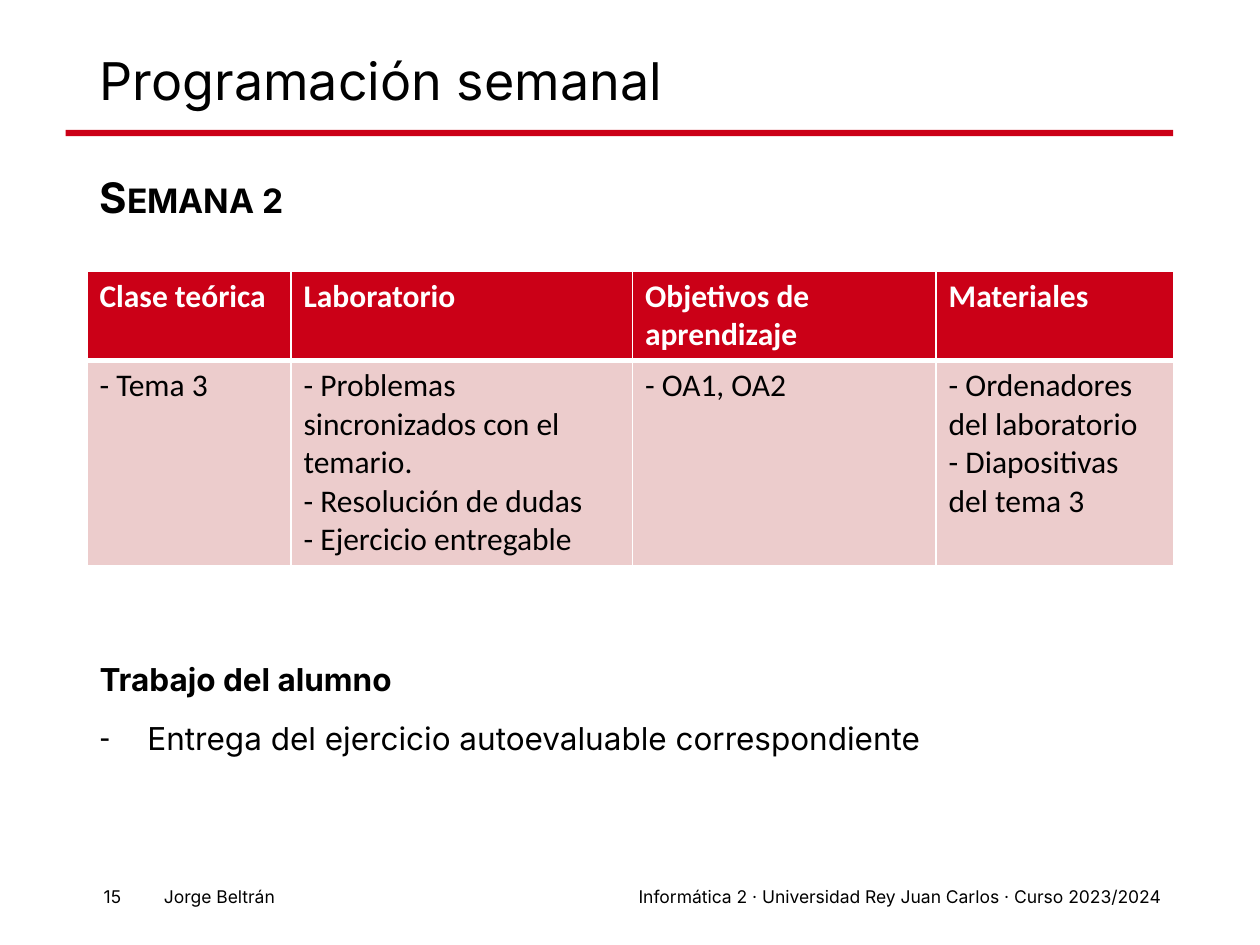
from dataclasses import dataclass

from lxml.etree import SubElement
from pptx import Presentation
from pptx.dml.color import RGBColor
from pptx.enum.shapes import MSO_SHAPE
from pptx.enum.text import MSO_ANCHOR, MSO_AUTO_SIZE, PP_ALIGN
from pptx.oxml.ns import qn
from pptx.util import Inches, Pt


@dataclass(frozen=True)
class Theme:
    red: RGBColor = RGBColor(0xCB, 0x00, 0x17)
    pink: RGBColor = RGBColor(0xEC, 0xCC, 0xCC)
    black: RGBColor = RGBColor(0, 0, 0)
    white: RGBColor = RGBColor(255, 255, 255)
    text_font: str = "Inter"
    table_font: str = "Calibri"
    title_size: float = 29.7
    week_size: float = 24
    body_size: float = 18
    footer_size: float = 10


THEME = Theme()
LEFT, WIDTH = 0.69, 8.62

SCHEDULE = [
    ["Clase teórica", "Laboratorio", "Objetivos de aprendizaje", "Materiales"],
    [
        "- Tema 3",
        "- Problemas sincronizados con el temario.\n"
        "- Resolución de dudas\n- Ejercicio entregable",
        "- OA1, OA2",
        "- Ordenadores del laboratorio\n- Diapositivas del tema 3",
    ],
]
COLUMN_WIDTHS = [1.62, 2.71, 2.41, 1.89]
ROW_HEIGHTS = [0.69, 1.61]


def set_all(target, values):
    for name, value in values.items():
        setattr(target, name, value)


def place(shape, box):
    set_all(shape, dict(zip(("left", "top", "width", "height"), map(Inches, box))))


def add_span(para, text, size, bold=False, color=THEME.black, font=THEME.text_font):
    span = para.add_run()
    span.text = text
    set_all(span.font, {"size": Pt(size), "bold": bold, "name": font})
    span.font.color.rgb = color
    return span


def prepare_frame(shape, box, anchor):
    place(shape, box)
    frame = shape.text_frame
    set_all(frame, {"word_wrap": True, "auto_size": MSO_AUTO_SIZE.NONE,
                    "vertical_anchor": anchor})
    return frame


def format_list_para(para, bullet=None):
    set_all(para, {"line_spacing": 1.2, "space_before": Pt(7.5),
                   "alignment": PP_ALIGN.LEFT})
    indent = Inches(0.38) if bullet else 0
    properties = para._p.get_or_add_pPr()
    properties.set("marL", str(indent))
    properties.set("indent", str(-indent))
    if bullet:
        SubElement(properties, qn("a:buChar")).set("char", bullet)
    else:
        SubElement(properties, qn("a:buNone"))


def add_title(page, box):
    frame = prepare_frame(page.shapes.title, box, MSO_ANCHOR.MIDDLE)
    para = frame.paragraphs[0]
    set_all(para, {"alignment": PP_ALIGN.LEFT, "line_spacing": 0.9})
    add_span(para, "Programación semanal", THEME.title_size)


def add_rule(page, box):
    rule = page.shapes.add_shape(MSO_SHAPE.RECTANGLE, *map(Inches, box))
    rule.shadow.inherit = False
    rule.fill.solid()
    rule.fill.fore_color.rgb = THEME.red
    rule.line.fill.background()


def add_week(page, box):
    frame = prepare_frame(page.placeholders[1], box, MSO_ANCHOR.TOP)
    para = frame.paragraphs[0]
    format_list_para(para)
    span = add_span(para, "Semana 2", THEME.week_size, bold=True)
    span.font._element.set("cap", "small")


def set_borders(cell, widths):
    """Draw white edges; widths maps L, R, T and B, in that order, to points."""
    properties = cell._tc.get_or_add_tcPr()
    for position, (side, width) in enumerate(widths.items()):
        line = SubElement(properties, qn(f"a:ln{side}"), w=str(Pt(width)))
        fill = SubElement(line, qn("a:solidFill"))
        SubElement(fill, qn("a:srgbClr"), val=str(THEME.white))
        properties.insert(position, line)


def fill_cell(cell, text, is_header):
    cell.fill.solid()
    cell.fill.fore_color.rgb = THEME.red if is_header else THEME.pink
    header_edge = {"B": 3} if is_header else {"T": 3}
    set_borders(cell, {"L": 1, "R": 1, "T": 1, "B": 1} | header_edge)
    frame = cell.text_frame
    for index, line in enumerate(text.split("\n")):
        para = frame.add_paragraph() if index else frame.paragraphs[0]
        add_span(para, line, THEME.body_size, is_header,
                 THEME.white if is_header else THEME.black, THEME.table_font)


def add_schedule(page, box):
    table = page.shapes.add_table(len(SCHEDULE), len(COLUMN_WIDTHS),
                                  *map(Inches, box)).table
    table.horz_banding = False
    for column, width in zip(table.columns, COLUMN_WIDTHS):
        column.width = Inches(width)
    for row, height, texts in zip(table.rows, ROW_HEIGHTS, SCHEDULE):
        row.height = Inches(height)
        for cell, text in zip(row.cells, texts):
            fill_cell(cell, text, texts is SCHEDULE[0])


def add_student_work(page, box):
    frame = prepare_frame(page.placeholders[2], box, MSO_ANCHOR.TOP)
    heading = frame.paragraphs[0]
    format_list_para(heading)
    add_span(heading, "Trabajo del alumno", THEME.body_size, bold=True)
    task = frame.add_paragraph()
    format_list_para(task, bullet="-")
    add_span(task, "Entrega del ejercicio autoevaluable correspondiente",
             THEME.body_size)


def add_footer(page, top, height):
    parts = [
        ("15", 0.58, 0.48),
        ("Jorge Beltrán", 0.21, 2.07),
        ("Informática 2 · Universidad Rey Juan Carlos · Curso 2023/2024", 2.53, 6.78),
    ]
    for text, left, width in parts:
        box = (left, top, width, height)
        shape = page.shapes.add_textbox(*map(Inches, box))
        para = prepare_frame(shape, box, MSO_ANCHOR.TOP).paragraphs[0]
        para.alignment = PP_ALIGN.RIGHT
        add_span(para, text, THEME.footer_size)


def main():
    deck = Presentation()
    set_all(deck, {"slide_width": Inches(10), "slide_height": Inches(7.5)})
    page = deck.slides.add_slide(deck.slide_layouts.get_by_name("Two Content"))
    add_rule(page, (0.52, 1.03, 8.79, 0.05))
    add_footer(page, 6.98, 0.27)
    add_title(page, (LEFT, 0.4, WIDTH, 0.52))
    add_week(page, (LEFT, 1.23, WIDTH, 0.68))
    add_schedule(page, (LEFT, 2.15, WIDTH, sum(ROW_HEIGHTS)))
    add_student_work(page, (LEFT, 5.13, WIDTH, 1.7))
    deck.save("out.pptx")


if __name__ == "__main__":
    main()
